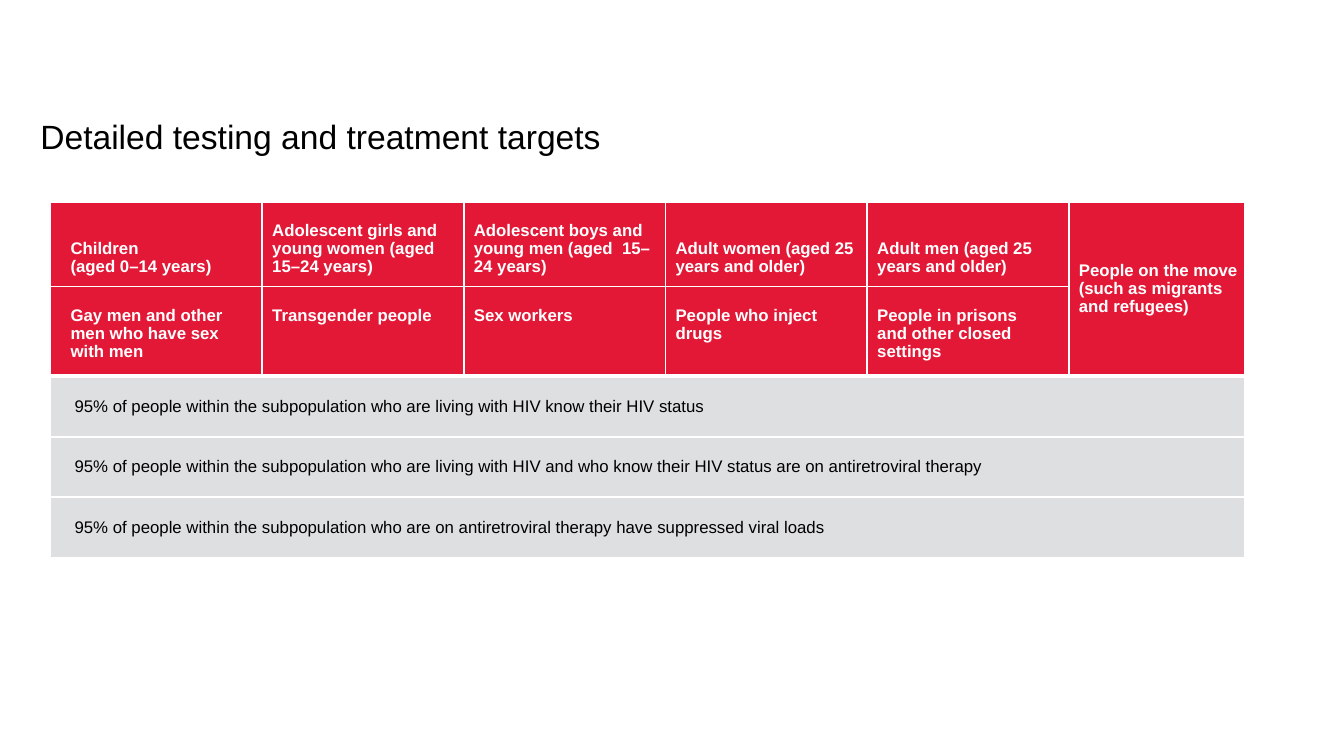
from lxml import etree
from pptx import Presentation
from pptx.dml.color import RGBColor
from pptx.enum.text import MSO_ANCHOR
from pptx.oxml.ns import qn
from pptx.util import Inches, Pt

TOP, MIDDLE, BOTTOM = MSO_ANCHOR.TOP, MSO_ANCHOR.MIDDLE, MSO_ANCHOR.BOTTOM
RED = RGBColor(0xE3, 0x18, 0x36)
GREY = RGBColor(0xDE, 0xDF, 0xE0)
WHITE = RGBColor(0xFF, 0xFF, 0xFF)
BLACK = RGBColor(0x00, 0x00, 0x00)

TITLE = "Detailed testing and treatment targets"
AGE_GROUPS = [
    "Children\n(aged 0–14 years)",
    "Adolescent girls and young women (aged 15–24 years)",
    "Adolescent boys and young men (aged  15–24 years)",
    "Adult women (aged 25 years and older)",
    "Adult men (aged 25 years and older)",
]
KEY_POPULATIONS = [
    "Gay men and other men who have sex with men",
    "Transgender people",
    "Sex workers",
    "People who inject drugs",
    "People in prisons and other closed settings",
]
MOBILE_PEOPLE = "People on the move (such as migrants and refugees)"
TARGETS = [
    "95% of people within the subpopulation who are living with HIV know their HIV status",
    "95% of people within the subpopulation who are living with HIV and who know their "
    "HIV status are on antiretroviral therapy",
    "95% of people within the subpopulation who are on antiretroviral therapy have "
    "suppressed viral loads",
]
COLUMN_WIDTHS = [2.1, 2, 2, 2, 2, 1.75]
ROW_HEIGHTS = [0.84, 0.89] + [0.6] * len(TARGETS)
HEADER_ROWS = 2
LAST_COLUMN = len(COLUMN_WIDTHS) - 1


def style_text(frame, size, color, bold=False, spacing=None):
    for paragraph in frame.paragraphs:
        if spacing:
            paragraph.line_spacing = Pt(spacing)
        for run in paragraph.runs:
            run.font.name = "Arial"
            run.font.size = Pt(size)
            run.font.bold = bold
            run.font.color.rgb = color


def set_insets(holder, left, top, right, bottom):
    holder.margin_left, holder.margin_top = Inches(left), Inches(top)
    holder.margin_right, holder.margin_bottom = Inches(right), Inches(bottom)


def add_border(cell, side, points):
    properties = cell._tc.get_or_add_tcPr()
    line = etree.SubElement(properties, qn(f"a:ln{side}"), w=str(Pt(points)))
    fill = etree.SubElement(line, qn("a:solidFill"))
    etree.SubElement(fill, qn("a:srgbClr"), val=str(WHITE))


def fill_cell(cell, text, insets, anchor, color, bold=False, spacing=None):
    cell.text_frame.text = text
    set_insets(cell, *insets)
    cell.vertical_anchor = anchor
    style_text(cell.text_frame, 12, color, bold, spacing)


prs = Presentation()
prs.slide_width, prs.slide_height = Inches(13.33), Inches(7.5)
slide = prs.slides.add_slide(prs.slide_layouts[6])

title = slide.shapes.add_textbox(Inches(0.4), Inches(1.15), Inches(12.5), Inches(0.4)).text_frame
title.word_wrap = True
set_insets(title, 0, 0, 0, 0)
title.text = TITLE
style_text(title, 24, BLACK)

targets_table = slide.shapes.add_table(
    len(ROW_HEIGHTS), len(COLUMN_WIDTHS), Inches(0.5), Inches(2),
    Inches(sum(COLUMN_WIDTHS)), Inches(sum(ROW_HEIGHTS)),
).table
targets_table.first_row = targets_table.horz_banding = False
for column, width in zip(targets_table.columns, COLUMN_WIDTHS):
    column.width = Inches(width)
for row, height in zip(targets_table.rows, ROW_HEIGHTS):
    row.height = Inches(height)

for r in range(len(ROW_HEIGHTS)):
    for c in range(len(COLUMN_WIDTHS)):
        cell = targets_table.cell(r, c)
        add_border(cell, "L", 1.5)
        add_border(cell, "R", 1.5)
        add_border(cell, "T", 3 if r == HEADER_ROWS else 1.5)
        add_border(cell, "B", 3 if r == HEADER_ROWS - 1 else 1.5)
        cell.fill.solid()
        cell.fill.fore_color.rgb = RED if r < HEADER_ROWS else GREY

header_rows = [(AGE_GROUPS, BOTTOM, 0), (KEY_POPULATIONS, TOP, 0.3)]
for r, (groups, anchor, right_inset) in enumerate(header_rows):
    for c, group in enumerate(groups):
        insets = (0.1 if c else 0.2, 0.2, right_inset, 0.1)
        fill_cell(targets_table.cell(r, c), group, insets, anchor, WHITE, True, 13)

mobile_cell = targets_table.cell(0, LAST_COLUMN)
mobile_cell.merge(targets_table.cell(HEADER_ROWS - 1, LAST_COLUMN))
fill_cell(mobile_cell, MOBILE_PEOPLE, (0.1, 0, 0, 0), MIDDLE, WHITE, True, 13)

for r, target in enumerate(TARGETS, HEADER_ROWS):
    target_cell = targets_table.cell(r, 0)
    target_cell.merge(targets_table.cell(r, LAST_COLUMN))
    fill_cell(target_cell, target, (0.24, 0, 0, 0), MIDDLE, BLACK)

prs.save("out.pptx")
